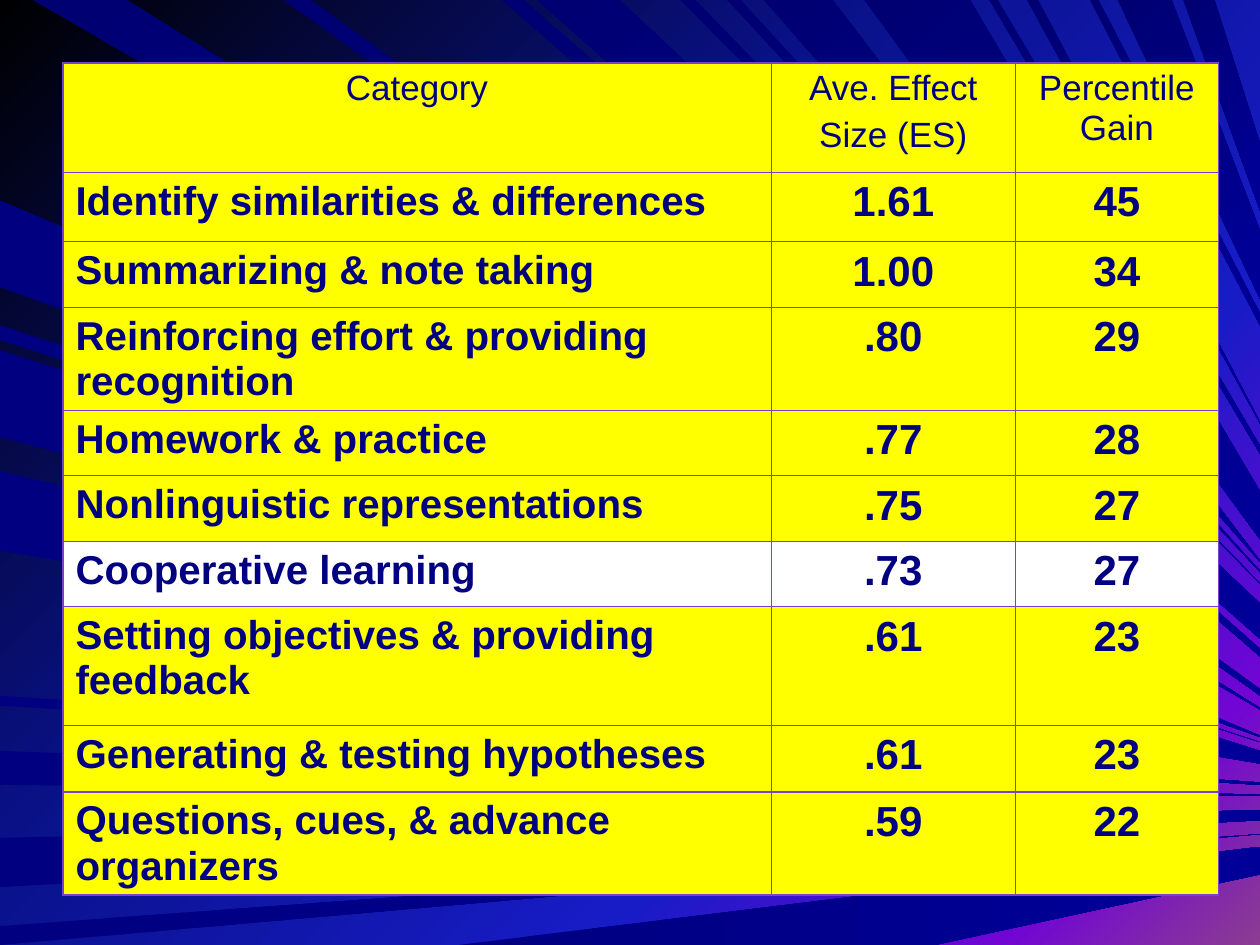
from copy import deepcopy
from lxml import etree
from pptx import Presentation
from pptx.dml.color import RGBColor
from pptx.enum.text import PP_ALIGN
from pptx.oxml.ns import qn
from pptx.util import Inches, Pt

LEFT, CENTER = PP_ALIGN.LEFT, PP_ALIGN.CENTER
THEME = {
    "font": "Arial", "text": "000080", "border": "7841CF",
    "cell": "FFFF00", "highlight": "FFFFFF",
    "header": 20, "label": 23, "value": 24, "gap": 4, "border_width": 0.75,
    "sky": [(0, "000000"), (0.4, "0A128C"), (0.7, "181CC7"),
            (0.88, "7005D4"), (1, "8C3D91")],
    "side_ray": ["000080", "000099"], "top_ray": ["000073", "000099"],
}


def paint(fill, colors, angle):
    fill.gradient()
    fill.gradient_angle = (360 - angle) % 360
    for stop, color in zip(fill.gradient_stops, colors):
        stop.color.rgb = RGBColor.from_string(color)


def border(cell):
    tcPr = cell._tc.get_or_add_tcPr()
    for side in ("a:lnL", "a:lnR", "a:lnT", "a:lnB"):
        ln = etree.SubElement(tcPr, qn(side), w=str(Pt(THEME["border_width"])))
        solid = etree.SubElement(ln, qn("a:solidFill"))
        etree.SubElement(solid, qn("a:srgbClr"), val=THEME["border"])


WIDTH, HEIGHT = 10, 7.5
SIDE_RAYS = [
    (5.96, 6.23, 6.32, 6.31), (6.65, 7.04, 6.51, 6.43), (7.35, 7.5, 6.62, 6.62),
    (2.58, 2.7, 5.89, 5.89), (1.59, 2.28, 5.85, 5.84), (2.78, 3.42, 6.02, 5.96),
    (3.74, 4.37, 6.06, 6.05), (5.52, 5.6, 6.23, 6.21), (2.83, 3.47, 6.06, 6.01),
]
TOP_RAYS = [
    (0.26, 1.01, 5.62, 5.63), (3.98, 4.16, 5.15, 5.21), (4.26, 4.92, 4.79, 5.07),
    (5.4, 5.52, 4.63, 4.63), (6.06, 6.61, 4.45, 4.46), (8.87, 9.3, 1.83, 2.37),
    (9.39, 9.64, 1.14, 1.67), (2.25, 2.47, 5.47, 5.52), (5.77, 5.88, 4.53, 4.54),
    (6.86, 7.7, 3.9, 4.28), (7.85, 7.92, 3.54, 3.6), (8.15, 8.24, 3.35, 3.36),
    (8.65, 8.72, 2.49, 2.58),
]
ROWS = [
    (0.87, "Category", "Ave. Effect\nSize (ES)", "Percentile Gain"),
    (0.55, "Identify similarities & differences", "1.61", "45"),
    (0.52, "Summarizing & note taking", "1.00", "34"),
    (0.81, "Reinforcing effort & providing recognition", ".80", "29"),
    (0.52, "Homework & practice", ".77", "28"),
    (0.52, "Nonlinguistic representations", ".75", "27"),
    (0.52, "Cooperative learning", ".73", "27"),
    (0.94, "Setting objectives & providing feedback", ".61", "23"),
    (0.53, "Generating & testing hypotheses", ".61", "23"),
    (0.75, "Questions, cues, & advance organizers", ".59", "22"),
]
COLUMNS = [5.62, 1.94, 1.61]
HIGHLIGHT_ROW = 6

prs = Presentation()
prs.slide_width, prs.slide_height = Inches(WIDTH), Inches(HEIGHT)
s = prs.slides.add_slide(prs.slide_layouts[6])

sky = THEME["sky"]
fill = s.background.fill
paint(fill, [sky[0][1], sky[-1][1]], 45)
stop_list = next(s.element.iter(qn("a:gsLst")))
for _ in sky[2:]:
    stop_list.append(deepcopy(stop_list[0]))
for stop, (position, color) in zip(fill.gradient_stops, sky):
    stop.position = position
    stop.color.rgb = RGBColor.from_string(color)

polygons = [("side_ray", 0, [(0, a), (0, b), (WIDTH, c), (WIDTH, d)])
            for a, b, c, d in SIDE_RAYS]
polygons.append(("side_ray", 0, [(3.64, HEIGHT), (7.42, HEIGHT), (WIDTH, 6.94), (WIDTH, 6.72)]))
polygons += [("top_ray", 45, [(a, 0), (b, 0), (WIDTH, c), (WIDTH, d)])
             for a, b, c, d in TOP_RAYS]
rays = s.shapes.add_group_shape()
for kind, angle, points in polygons:
    points = [(Inches(x), Inches(y)) for x, y in points]
    builder = rays.shapes.build_freeform(*points[0])
    builder.add_line_segments(points[1:], close=True)
    sp = builder.convert_to_shape()
    sp.shadow.inherit = False
    sp.line.fill.background()
    paint(sp.fill, THEME[kind], angle)

table = s.shapes.add_table(len(ROWS), len(COLUMNS), Inches(0.5), Inches(0.5),
                           Inches(sum(COLUMNS)), Inches(sum(row[0] for row in ROWS))).table
table.first_row = table.horz_banding = False
for column, width in zip(table.columns, COLUMNS):
    column.width = Inches(width)
for i, (height, *texts) in enumerate(ROWS):
    table.rows[i].height = Inches(height)
    for j, text in enumerate(texts):
        cell = table.cell(i, j)
        border(cell)
        cell.fill.solid()
        cell.fill.fore_color.rgb = RGBColor.from_string(
            THEME["highlight" if i == HIGHLIGHT_ROW else "cell"])
        size = "header" if i == 0 else "label" if j == 0 else "value"
        font = {"name": THEME["font"], "size": Pt(THEME[size]), "bold": i > 0}
        tf = cell.text_frame
        tf.text = text
        for k, p in enumerate(tf.paragraphs):
            p.alignment = LEFT if i and j == 0 else CENTER
            if k:
                p.space_before = Pt(THEME["gap"])
            r = p.runs[0]
            for name, value in font.items():
                setattr(r.font, name, value)
            r.font.color.rgb = RGBColor.from_string(THEME["text"])

prs.save("out.pptx")
